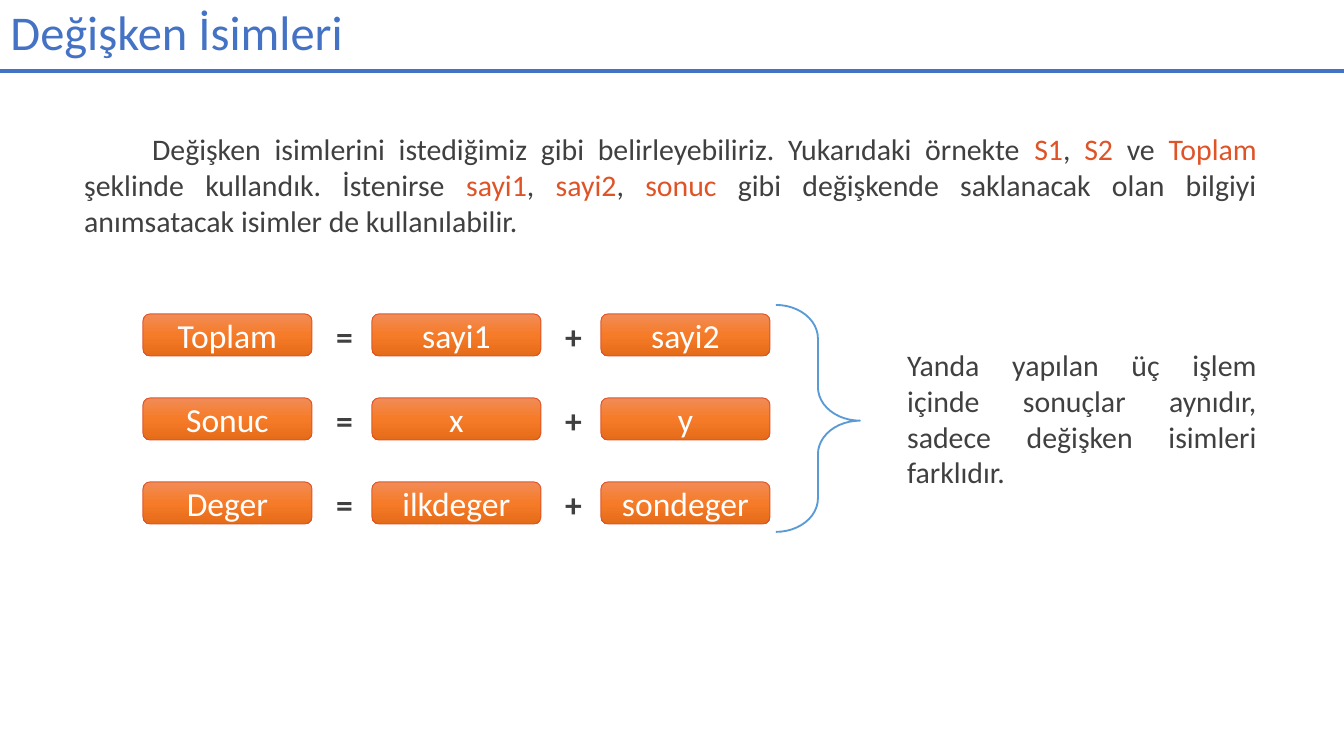
from copy import deepcopy

from pptx import Presentation
from pptx.dml.color import RGBColor
from pptx.enum.shapes import MSO_CONNECTOR, MSO_SHAPE
from pptx.enum.text import MSO_ANCHOR, MSO_AUTO_SIZE, PP_ALIGN
from pptx.oxml.ns import qn
from pptx.oxml.xmlchemy import OxmlElement
from pptx.util import Pt

# Content
TITLE = "Değişken İsimleri"
INTRO = [
    ("Değişken isimlerini istediğimiz gibi belirleyebiliriz. Yukarıdaki örnekte ", "text"),
    ("S1", "accent"), (", ", "text"), ("S2", "accent"), (" ve ", "text"),
    ("Toplam", "accent"), (" şeklinde kullandık. İstenirse ", "text"),
    ("sayi1", "accent"), (", ", "text"), ("sayi2", "accent"), (", ", "text"),
    ("sonuc", "accent"),
    (" gibi değişkende saklanacak olan bilgiyi anımsatacak isimler de kullanılabilir.", "text"),
]
EQUATIONS = [
    ("Toplam", "sayi1", "sayi2"),
    ("Sonuc", "x", "y"),
    ("Deger", "ilkdeger", "sondeger"),
]
OPERATORS = ("=", "+")
NOTE = [("Yanda yapılan üç işlem içinde sonuçlar aynıdır, "
         "sadece değişken isimleri farklıdır.", "text")]

# Style
FONT = "Calibri"
COLORS = {"title": "4472C4", "text": "404040", "accent": "DF5327",
          "white": "FFFFFF", "brace": "5B9BD5"}
BOX_GRADIENT = [(0, "F18C57"), (0.5, "F67B28"), (1, "E56C19")]

# Layout in px
SCALE = 914400 / 134.4
GRID_X, GRID_Y, STEP_X, STEP_Y = 143, 314, 229, 84
BOX_W, BOX_H = 169, 42
OP_DX, OP_DY, OP_W = 180, -5, 48


def px(*lengths):
    return [round(n * SCALE) for n in lengths]


def rgb(name):
    return RGBColor.from_string(COLORS[name])


def write(tf, runs, size, align, bold=False):
    tf.word_wrap = True
    p = tf.paragraphs[0]
    p.alignment = align
    for text, color in runs:
        r = p.add_run()
        r.text = text
        r.font.name, r.font.size, r.font.bold = FONT, Pt(size), bold
        r.font.color.rgb = rgb(color)
    return p


def add_text(shapes, box, runs, size, bold=False):
    tb = shapes.add_textbox(*px(*box))
    return write(tb.text_frame, runs, size, PP_ALIGN.JUSTIFY, bold)


def add_variable(shapes, x, y, name):
    sp = shapes.add_shape(MSO_SHAPE.ROUNDED_RECTANGLE, *px(x, y, BOX_W, BOX_H))
    sp.shadow.inherit = False
    sp.fill.gradient()
    sp.fill.gradient_angle = 270
    stop_list = sp.element.spPr.find(qn("a:gradFill")).find(qn("a:gsLst"))
    stop_list.append(deepcopy(stop_list[0]))
    for stop, (position, color) in zip(sp.fill.gradient_stops, BOX_GRADIENT):
        stop.position = position
        stop.color.rgb = RGBColor.from_string(color)
    sp.line.color.rgb = rgb("accent")
    sp.line.width = Pt(0.5)
    sp.text_frame.vertical_anchor = MSO_ANCHOR.MIDDLE
    write(sp.text_frame, [(name, "white")], 18, PP_ALIGN.CENTER)


prs = Presentation()
prs.slide_width, prs.slide_height = px(1344, 756)
s = prs.slides.add_slide(prs.slide_layouts[5])

# Title and rule
title = s.shapes.title
title.left, title.top, title.width, title.height = px(-3, -1, 1156, 72)
title.text_frame.auto_size = MSO_AUTO_SIZE.NONE
title.text_frame.vertical_anchor = MSO_ANCHOR.MIDDLE
write(title.text_frame, [(TITLE, "title")], 26, PP_ALIGN.LEFT).line_spacing = 0.9

rule = s.shapes.add_connector(MSO_CONNECTOR.STRAIGHT, *px(0, 71, 1344, 71))
rule.line.color.rgb = rgb("title")
rule.line.width = Pt(2.25)
rule.element.spPr.append(OxmlElement("a:effectLst"))

# Introduction with first-line indent
p = add_text(s.shapes, (71, 124, 1199, 117), INTRO, 16)
p._p.get_or_add_pPr().set("indent", str(px(68)[0]))

# Equations, one group per row
for row, names in enumerate(EQUATIONS):
    group = s.shapes.add_group_shape().shapes
    y = GRID_Y + row * STEP_Y
    for col, name in enumerate(names):
        x = GRID_X + col * STEP_X
        add_variable(group, x, y, name)
        if col < len(OPERATORS):
            add_text(group, (x + OP_DX, y + OP_DY, OP_W, BOX_H),
                     [(OPERATORS[col], "text")], 18, bold=True)

# Brace and note
brace = s.shapes.add_shape(MSO_SHAPE.RIGHT_BRACE, *px(776, 305, 84, 227))
brace.shadow.inherit = False
brace.adjustments[0], brace.adjustments[1] = 0.4, 0.51
brace.fill.background()
brace.line.color.rgb = rgb("brace")
brace.line.width = Pt(1)
add_text(s.shapes, (894, 340, 376, 117), NOTE, 16)

prs.save("out.pptx")
